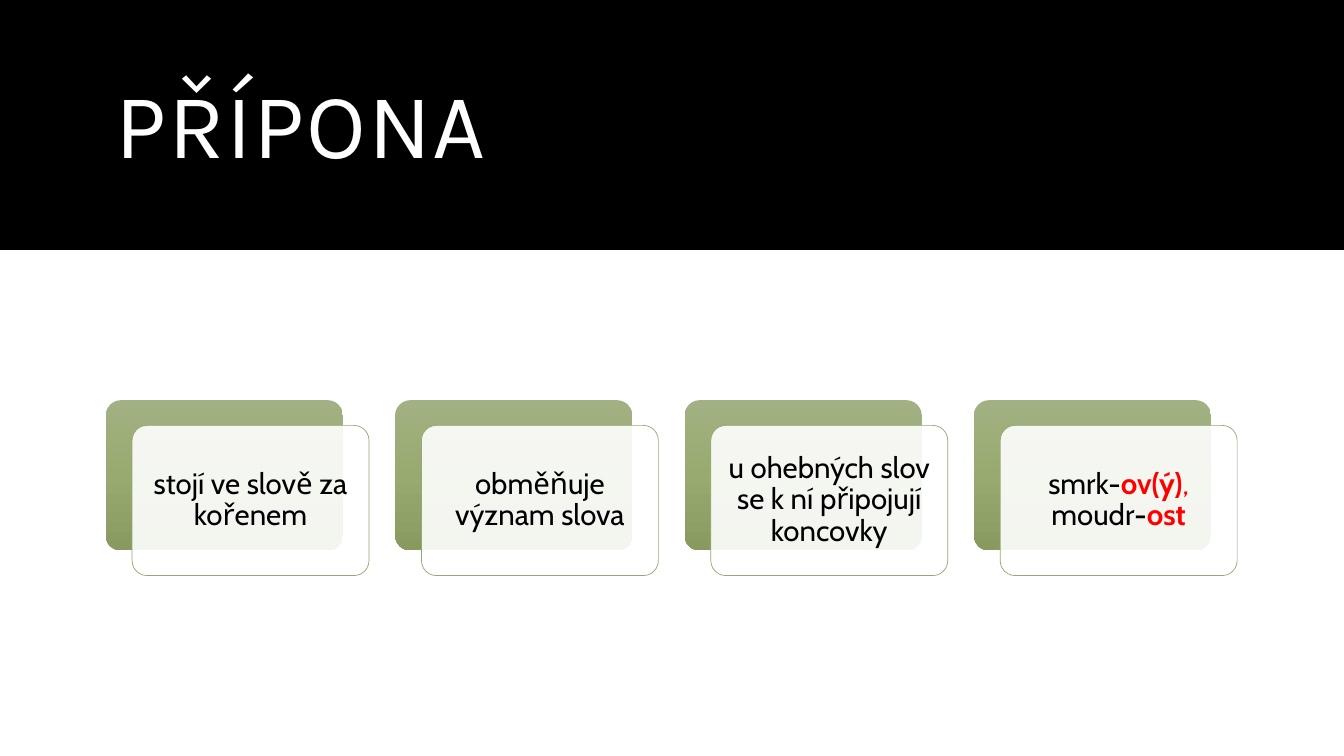
"""Build the slide on suffixes: a title band above four layered cards."""
import copy
from dataclasses import dataclass

import pptx
import pptx.dml.color
import pptx.enum.shapes
import pptx.enum.text
import pptx.oxml
import pptx.oxml.ns
import pptx.shapes.autoshape
import pptx.slide
import pptx.text.text
import pptx.util

Inches = pptx.util.Inches
COLORS = {
    "black": "000000",
    "white": "FFFFFF",
    "red": "FF0000",
    "outline": "97A772",
    "green_light": "A2B183",
    "green_middle": "98AA6F",
    "green_dark": "889A60",
}
CARD_GRADIENT = [(0, "green_light"), (0.5, "green_middle"), (1, "green_dark")]
CARD_LEFT, CARD_TOP, CARD_STEP = 1.05, 3.97, 2.87
CARD_WIDTH, CARD_HEIGHT = 2.35, 1.49
PANEL_SHIFT_X, PANEL_SHIFT_Y = 0.26, 0.25
TEXT_MARGIN = 0.04
TEXT_INSET = 0.09


@dataclass(frozen=True)
class Fragment:
    text: str
    color: str = "black"
    bold: bool = False


@dataclass(frozen=True)
class Card:
    fragments: tuple[Fragment, ...]


CARDS = [
    Card((Fragment("stojí ve slově za kořenem"),)),
    Card((Fragment("obměňuje význam slova"),)),
    Card((Fragment("u ohebných slov se k ní připojují koncovky"),)),
    Card((
        Fragment("smrk-"),
        Fragment("ov(ý)", "red", True),
        Fragment(", ", "red"),
        Fragment("moudr"),
        Fragment("-", "black", True),
        Fragment("ost", "red", True),
    )),
]


def rgb(name: str) -> pptx.dml.color.RGBColor:
    """Return the named colour."""
    return pptx.dml.color.RGBColor.from_string(COLORS[name])


def add_block(slide: pptx.slide.Slide, kind: pptx.enum.shapes.MSO_SHAPE, left: float,
              top: float, width: float, height: float) -> pptx.shapes.autoshape.Shape:
    """Add a preset shape without shadow or line."""
    shape = slide.shapes.add_shape(
        kind, Inches(left), Inches(top), Inches(width), Inches(height))
    shape.shadow.inherit = False
    shape.line.fill.background()
    return shape


def add_rounded(slide: pptx.slide.Slide, left: float, top: float) -> pptx.shapes.autoshape.Shape:
    """Add one rounded layer of a card."""
    shape = add_block(slide, pptx.enum.shapes.MSO_SHAPE.ROUNDED_RECTANGLE,
                      left, top, CARD_WIDTH, CARD_HEIGHT)
    shape.adjustments[0] = 0.1
    return shape


def add_text_box(slide: pptx.slide.Slide, left: float, top: float, width: float,
                 height: float) -> pptx.text.text.TextFrame:
    """Add a wrapping, vertically centred text box."""
    box = slide.shapes.add_textbox(Inches(left), Inches(top), Inches(width), Inches(height))
    frame = box.text_frame
    frame.word_wrap = True
    frame.vertical_anchor = pptx.enum.text.MSO_ANCHOR.MIDDLE
    frame.paragraphs[0].line_spacing = 0.9
    return frame


def format_font(font: pptx.text.text.Font, name: str, size: float, color: str) -> None:
    """Set the face, size and colour of a font."""
    font.name = name
    font.size = pptx.util.Pt(size)
    font.color.rgb = rgb(color)


def fill_gradient(shape: pptx.shapes.autoshape.Shape) -> None:
    """Fill a shape with the three-stop vertical gradient."""
    shape.fill.gradient()
    shape.fill.gradient_angle = 270
    stop_list = shape._element.spPr.find(
        pptx.oxml.ns.qn("a:gradFill") + "/" + pptx.oxml.ns.qn("a:gsLst"))
    stop_list.insert(1, copy.deepcopy(stop_list[0]))
    for stop, (position, color) in zip(shape.fill.gradient_stops, CARD_GRADIENT):
        stop.position = position
        stop.color.rgb = rgb(color)


def fill_translucent(shape: pptx.shapes.autoshape.Shape, color: str, opacity: int) -> None:
    """Fill a shape with a colour at the given opacity in percent."""
    shape.fill.solid()
    shape.fill.fore_color.rgb = rgb(color)
    color_element = shape._element.spPr.find(
        pptx.oxml.ns.qn("a:solidFill") + "/" + pptx.oxml.ns.qn("a:srgbClr"))
    color_element.append(pptx.oxml.parse_xml(
        f'<a:alpha {pptx.oxml.ns.nsdecls("a")} val="{opacity * 1000}"/>'))


def add_header(slide: pptx.slide.Slide) -> None:
    """Add the black band and the title."""
    band = add_block(slide, pptx.enum.shapes.MSO_SHAPE.RECTANGLE, 0, 0, 13.33, 2.48)
    band.fill.solid()
    band.fill.fore_color.rgb = rgb("black")
    paragraph = add_text_box(slide, 1.05, 0.35, 11.23, 1.86).paragraphs[0]
    paragraph.text = "PŘÍPONA"
    run = paragraph.runs[0]
    format_font(run.font, "Karla", 66, "white")
    run._r.get_or_add_rPr().set("spc", "120")


def add_card(slide: pptx.slide.Slide, card: Card, left: float) -> None:
    """Add a green back layer, a translucent panel and its text."""
    fill_gradient(add_rounded(slide, left, CARD_TOP))
    panel_left, panel_top = left + PANEL_SHIFT_X, CARD_TOP + PANEL_SHIFT_Y
    panel = add_rounded(slide, panel_left, panel_top)
    fill_translucent(panel, "white", 90)
    panel.line.color.rgb = rgb("outline")
    panel.line.width = pptx.util.Pt(0.5)

    frame = add_text_box(slide, panel_left + TEXT_MARGIN, panel_top + TEXT_MARGIN,
                         CARD_WIDTH - 2 * TEXT_MARGIN, CARD_HEIGHT - 2 * TEXT_MARGIN)
    frame.margin_left = frame.margin_right = Inches(TEXT_INSET)
    frame.margin_top = frame.margin_bottom = Inches(TEXT_INSET)
    paragraph = frame.paragraphs[0]
    paragraph.alignment = pptx.enum.text.PP_ALIGN.CENTER
    for fragment in card.fragments:
        run = paragraph.add_run()
        run.text = fragment.text
        format_font(run.font, "Cabin", 21, fragment.color)
        run.font.bold = fragment.bold


def main() -> None:
    """Build and save the presentation."""
    presentation = pptx.Presentation()
    presentation.slide_width = Inches(13.33)
    presentation.slide_height = Inches(7.5)
    slide = presentation.slides.add_slide(presentation.slide_layouts[6])
    slide.background.fill.solid()
    slide.background.fill.fore_color.rgb = rgb("white")
    add_header(slide)
    for index, card in enumerate(CARDS):
        add_card(slide, card, CARD_LEFT + index * CARD_STEP)
    presentation.save("out.pptx")


if __name__ == "__main__":
    main()
